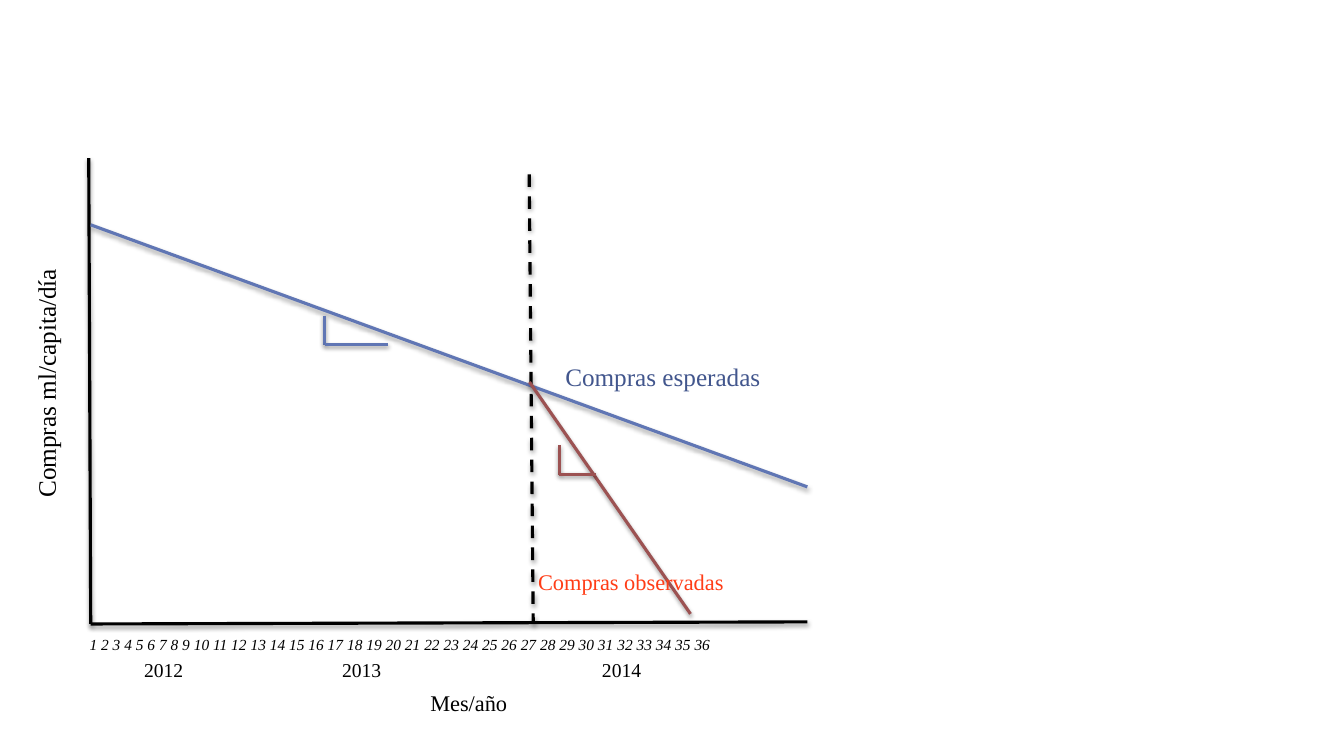
import pptx
import pptx.dml.color
import pptx.enum.dml
import pptx.enum.shapes
import pptx.enum.text
import pptx.oxml
import pptx.oxml.ns
import pptx.util

Pt = pptx.util.Pt
FONT = "Times New Roman"
COLORS = {
    "black": "000000",
    "expected": "6076B4",
    "observed": "9C5252",
    "expected_label": "42568D",
    "observed_label": "FF3D17",
}
SHADOW = (
    f'<a:effectLst {pptx.oxml.ns.nsdecls("a")}>'
    '<a:outerShdw blurRad="40000" dist="20000" dir="5400000" rotWithShape="0">'
    '<a:srgbClr val="000000"><a:alpha val="38000"/></a:srgbClr>'
    '</a:outerShdw></a:effectLst>'
)


def color_of(name):
    """Return the named colour."""
    return pptx.dml.color.RGBColor.from_string(COLORS[name])


def add_line(page, start, end, color, dashed=False):
    """Draw a straight line with a soft shadow below it."""
    line = page.shapes.add_connector(
        pptx.enum.shapes.MSO_CONNECTOR.STRAIGHT, *map(Pt, (*start, *end)))
    line.line.width = Pt(2.25)
    line.line.color.rgb = color_of(color)
    if dashed:
        line.line.dash_style = pptx.enum.dml.MSO_LINE.DASH
    line._element.spPr.append(pptx.oxml.parse_xml(SHADOW))


def add_slope_mark(page, left, top, width, height, color):
    """Draw the upright and the base of a slope triangle."""
    corner = (left, top + height)
    add_line(page, (left, top), corner, color)
    add_line(page, corner, (left + width, top + height), color)


def add_label(page, text, bounds, size, color="black", wrap=False, italic=False):
    """Write a one-line label and return its box."""
    box = page.shapes.add_textbox(*map(Pt, bounds))
    frame = box.text_frame
    frame.text = text
    frame.word_wrap = wrap
    frame.auto_size = pptx.enum.text.MSO_AUTO_SIZE.SHAPE_TO_FIT_TEXT
    font = frame.paragraphs[0].runs[0].font
    font.name = FONT
    font.size = Pt(size)
    font.italic = italic
    font.color.rgb = color_of(color)
    return box


def main():
    """Build the slide of expected and observed purchases."""
    deck = pptx.Presentation()
    deck.slide_width, deck.slide_height = Pt(960), Pt(540)
    page = deck.slides.add_slide(deck.slide_layouts[6])

    origin = (64.8, 445.7)
    add_line(page, (63.4, 113), origin, "black")
    add_line(page, origin, (576.7, 444.2), "black")
    add_line(page, (378, 124.6), (380.9, 445.7), "black", dashed=True)
    add_line(page, (64.8, 160.6), (576.7, 347.8), "expected")
    add_line(page, (378.2, 272.9), (493.2, 438.5), "observed")
    add_slope_mark(page, 231.8, 225.4, 45.4, 20.9, "expected")
    add_slope_mark(page, 399.6, 318.2, 25.9, 20.9, "observed")

    axis_title = add_label(page, "Compras ml/capita/día", (-56.9, 258.5, 179.3, 28.8), 18)
    axis_title.rotation = 270
    months = " ".join(str(month) for month in range(1, 37))
    add_label(page, months, (56.9, 450, 519.8, 20.9), 11, wrap=True, italic=True)
    for year, left in ((2012, 95.8), (2013, 237.2), (2014, 422.9)):
        add_label(page, str(year), (left, 466.6, 49, 24.5), 14)
    time_title = add_label(page, "Mes/año", (298.8, 488.9, 70.6, 26.6), 16)
    time_title.text_frame.paragraphs[0].alignment = pptx.enum.text.PP_ALIGN.RIGHT
    add_label(page, "Compras esperadas", (396.7, 254.2, 155.5, 28.8), 18, "expected_label")
    add_label(page, "Compras observadas", (377.3, 402.5, 149, 26.6), 16, "observed_label")

    deck.save("out.pptx")


if __name__ == "__main__":
    main()
